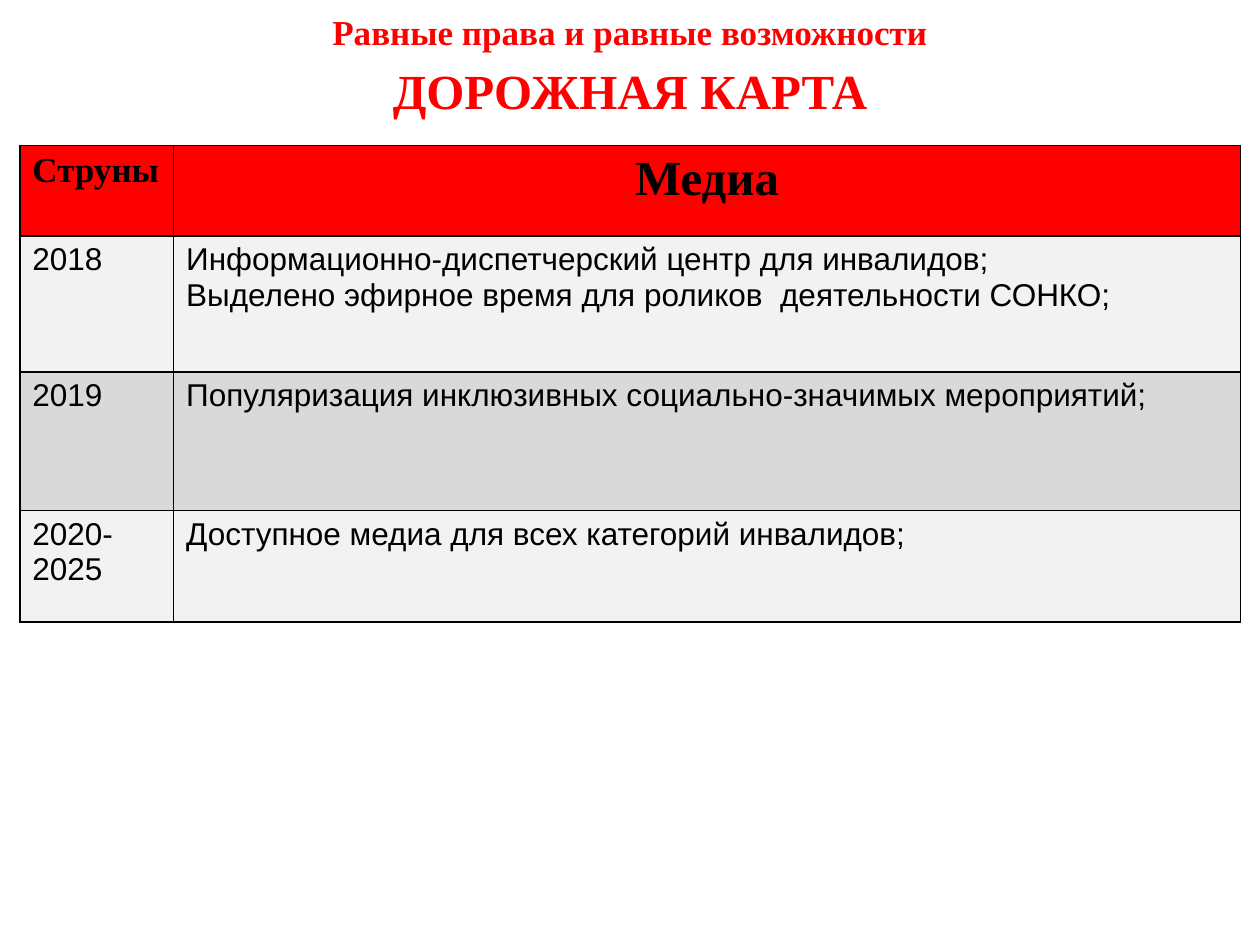
import pptx
import pptx.dml.color
import pptx.enum.text
import pptx.oxml
import pptx.oxml.ns
import pptx.util
from pptx.util import Cm

RED, BLACK, LIGHT, DARK = "FF0000", "000000", "F2F2F2", "D9D9D9"
SERIF, SANS = "Times New Roman", "Arial"
CENTER = pptx.enum.text.PP_ALIGN.CENTER
LEFT = pptx.enum.text.PP_ALIGN.LEFT

HEADERS = [("Струны", 20, LEFT), ("Медиа", 28, CENTER)]
STAGES = [
    ("2018", ["Информационно-диспетчерский центр для инвалидов;",
              "Выделено эфирное время для роликов  деятельности СОНКО;"]),
    ("2019", ["Популяризация инклюзивных социально-значимых мероприятий;"]),
    ("2020-2025", ["Доступное медиа для всех категорий инвалидов;"]),
]
COLUMN_WIDTHS = [3.1, 21.51]
ROW_HEIGHTS = [1.83, 2.74, 2.79, 2.25]


def color(value):
    return pptx.dml.color.RGBColor.from_string(value)


def add_text(para, text, size, font, fill, bold=False, align=LEFT):
    para.alignment = align
    span = para.add_run()
    span.text = text
    span.font.size = pptx.util.Pt(size)
    span.font.name = font
    span.font.bold = bold
    span.font.color.rgb = color(fill)


def style_cell(cell, fill):
    """Black 1 pt borders first, then the fill, as the schema orders them."""
    properties = cell._tc.get_or_add_tcPr()
    for side in ("lnL", "lnR", "lnT", "lnB"):
        properties.append(pptx.oxml.parse_xml(
            f'<a:{side} {pptx.oxml.ns.nsdecls("a")} w="12700"><a:solidFill>'
            f'<a:srgbClr val="{BLACK}"/></a:solidFill></a:{side}>'))
    cell.fill.solid()
    cell.fill.fore_color.rgb = color(fill)


def place_title(page, left, top, width, height):
    box = page.shapes.title
    box.left, box.top, box.width, box.height = left, top, width, height
    frame = box.text_frame
    frame.word_wrap = True
    frame.auto_size = pptx.enum.text.MSO_AUTO_SIZE.NONE
    frame.vertical_anchor = pptx.enum.text.MSO_ANCHOR.MIDDLE
    add_text(frame.paragraphs[0], "Равные права и равные возможности",
             20, SERIF, RED, True, CENTER)
    para = frame.add_paragraph()
    para.space_before = pptx.util.Pt(4.6)
    add_text(para, "ДОРОЖНАЯ КАРТА", 28, SERIF, RED, True, CENTER)


def place_roadmap(page, left, top, width, height):
    table = page.shapes.add_table(
        len(ROW_HEIGHTS), len(COLUMN_WIDTHS), left, top, width, height).table
    for column, size in zip(table.columns, COLUMN_WIDTHS):
        column.width = Cm(size)
    for row, size in zip(table.rows, ROW_HEIGHTS):
        row.height = Cm(size)

    # Header row
    for index, (text, size, align) in enumerate(HEADERS):
        cell = table.cell(0, index)
        style_cell(cell, RED)
        add_text(cell.text_frame.paragraphs[0], text, size, SERIF, BLACK, True, align)

    # One row per stage, in alternating greys
    for number, (years, tasks) in enumerate(STAGES, start=1):
        for index, lines in enumerate([[years], tasks]):
            cell = table.cell(number, index)
            style_cell(cell, LIGHT if number % 2 else DARK)
            frame = cell.text_frame
            for order, line in enumerate(lines):
                para = frame.add_paragraph() if order else frame.paragraphs[0]
                add_text(para, line, 18, SANS, BLACK)


def main():
    deck = pptx.Presentation()
    deck.slide_width, deck.slide_height = Cm(25.4), Cm(19.05)
    page = deck.slides.add_slide(deck.slide_layouts[5])
    place_title(page, Cm(1.3), Cm(0.36), Cm(22.8), Cm(1.9))
    place_roadmap(page, Cm(0.4), Cm(2.93), Cm(sum(COLUMN_WIDTHS)), Cm(sum(ROW_HEIGHTS)))
    deck.save("out.pptx")


if __name__ == "__main__":
    main()
